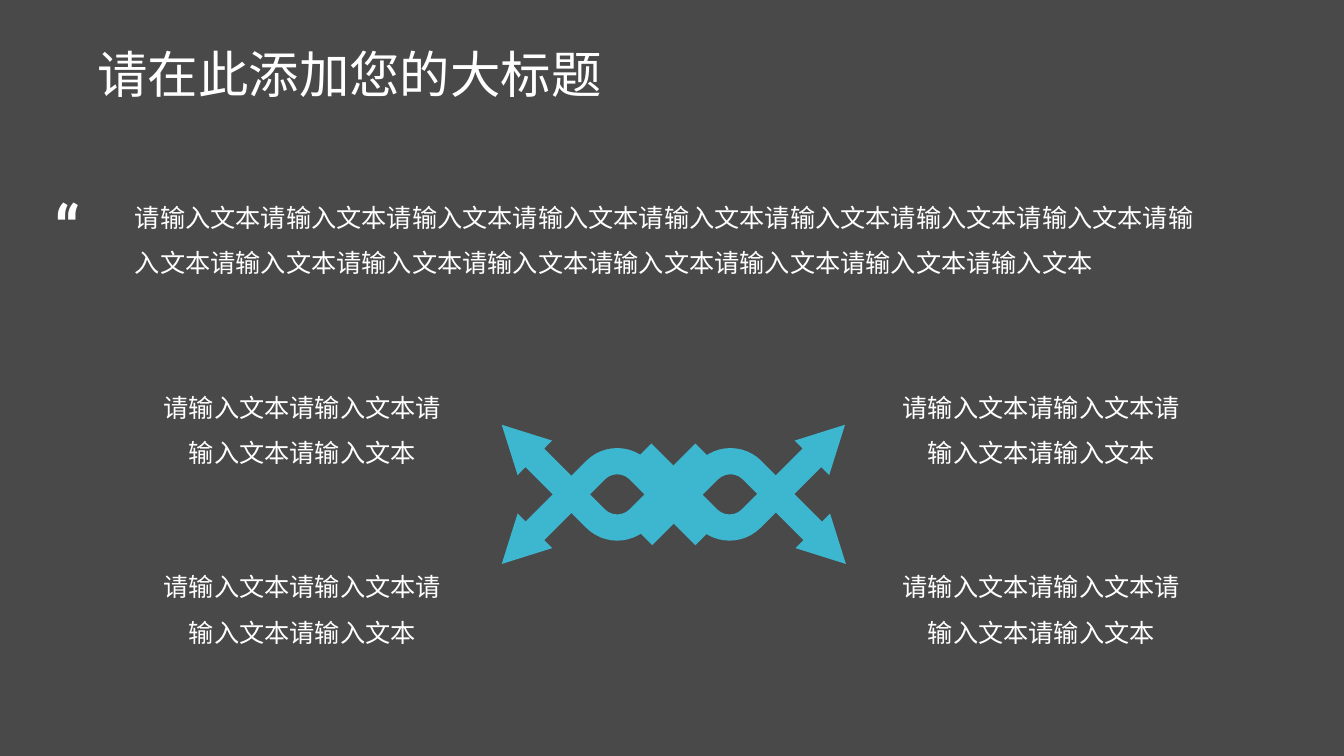
import pptx
import pptx.util
import pptx.dml.color
import pptx.enum.shapes
import pptx.enum.text
import pptx.oxml.ns
import lxml.etree

Pt = pptx.util.Pt
Shape = pptx.enum.shapes.MSO_SHAPE
Align = pptx.enum.text.PP_ALIGN
Anchor = pptx.enum.text.MSO_ANCHOR
qn = pptx.oxml.ns.qn

deck = pptx.Presentation()
deck.slide_width, deck.slide_height = Pt(960), Pt(540)
slide = deck.slides.add_slide(deck.slide_layouts[6])


def paint(fill, color):
    fill.solid()
    fill.fore_color.rgb = pptx.dml.color.RGBColor.from_string(color)


def write(text, left, top, width, height, size=18, font="Noto Sans CJK SC",
          bold=False, align=Align.LEFT, anchor=Anchor.MIDDLE, space=1.5):
    frame = slide.shapes.add_textbox(Pt(left), Pt(top), Pt(width), Pt(height)).text_frame
    frame.word_wrap = True
    frame.vertical_anchor = anchor
    line = frame.paragraphs[0]
    line.alignment = align
    line.line_spacing = space
    run = line.add_run()
    run.text = text
    run.font.size = Pt(size)
    run.font.bold = bold
    run.font.name = font
    paint(run.font.fill, "FFFFFF")
    latin = run.font._element.find(qn("a:latin"))
    east = lxml.etree.Element(qn("a:ea"), typeface=font)
    latin.addnext(east)


paint(slide.background.fill, "4D4D4D")
veil = slide.shapes.add_shape(Shape.RECTANGLE, 0, 0, Pt(960), Pt(540))
veil.shadow.inherit = False
veil.line.fill.background()
paint(veil.fill, "3B3B39")
tint = veil._element.spPr.find(qn("a:solidFill"))[0]
lxml.etree.SubElement(tint, qn("a:alpha"), val="20000")

write("请在此添加您的大标题", 62.6, 21.6, 787.7, 67, size=36, space=0.9)
write("请输入文本" * 16, 89.3, 118.1, 781.2, 95.8)
write("“", 31.7, 130.3, 50.4, 65.5, size=48, font="Roboto Condensed",
      bold=True, anchor=Anchor.TOP, space=1)

knot = slide.shapes.add_group_shape()
for left, top, turn, flips in (
    (365, 330.5, 315, ["flipH"]),
    (365, 270, 45, ["flipH", "flipV"]),
    (471.6, 330.5, 45, []),
    (471, 270, 315, ["flipV"]),
):
    arrow = knot.shapes.add_shape(Shape.BENT_ARROW, Pt(left), Pt(top), Pt(126), Pt(105.8))
    arrow.shadow.inherit = False
    arrow.line.fill.background()
    paint(arrow.fill, "3DB7CF")
    for index, value in enumerate((0.177, 0.165, 0.316, 0.295)):
        arrow.adjustments[index] = value
    arrow.rotation = turn
    for flip in flips:
        arrow._element.spPr.xfrm.set(flip, "1")

for left in (109.4, 637.2):
    for top in (260.6, 388.8):
        write("请输入文本" * 4, left, top, 213.1, 82.1, align=Align.CENTER)

deck.save("out.pptx")
